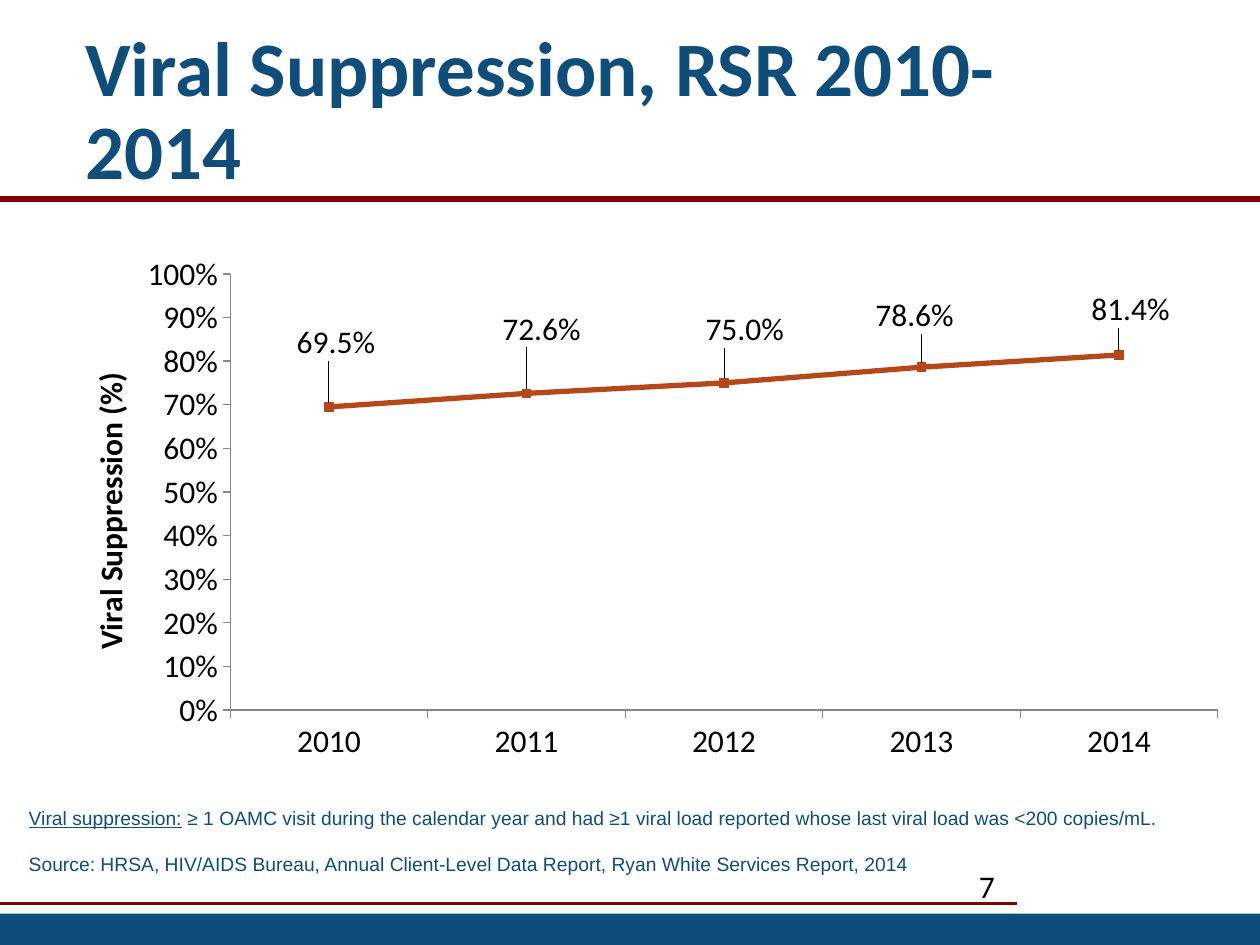
"""Build the viral suppression line chart slide."""
import pptx
import pptx.chart.data
import pptx.dml.color
import pptx.enum.chart
import pptx.enum.shapes
import pptx.enum.text
import pptx.oxml
import pptx.oxml.ns
import pptx.util
from pptx.util import Inches

COLORS = {"blue": "0F4D7B", "red": "800000", "orange": "B64718",
          "gray": "868686", "black": "000000"}
RATES = {"2010": 0.695, "2011": 0.726, "2012": 0.75, "2013": 0.786, "2014": 0.814}
LABEL_OFFSETS = [(0.006, -0.066), (0.013, -0.066), (0.018, -0.046),
                 (-0.006, -0.042), (0.01, -0.031)]
TITLE_FONT = {"name": "Calibri", "size": 44, "bold": True, "color": "blue"}
NOTE_FONT = {"name": "Arial", "size": 11, "color": "blue"}
BODY_FONT = {"name": "Calibri", "size": 18, "bold": False, "color": "black"}
NOTES = [
    [("Viral suppression:", {"underline": True}),
     (" ≥ 1 OAMC visit during the calendar year and had ≥1 viral load reported "
      "whose last viral load was <200 copies/mL.", {})],
    [("Source: HRSA, HIV/AIDS Bureau, Annual Client-Level Data Report, "
      "Ryan White Services Report, 2014", {})],
]


def rgb(name):
    """Return the named colour."""
    return pptx.dml.color.RGBColor.from_string(COLORS[name])


def style_font(font, values):
    """Set font attributes from a dict."""
    for name, value in values.items():
        if name == "color":
            font.color.rgb = rgb(value)
        else:
            setattr(font, name, pptx.util.Pt(value) if name == "size" else value)


def chart_xml(tag, content="", attributes=""):
    """Return a chart element with the given content."""
    namespace = pptx.oxml.ns.nsdecls("c")
    return pptx.oxml.parse_xml(f"<c:{tag} {namespace} {attributes}>{content}</c:{tag}>")


def manual_layout(**values):
    """Return a chart layout element."""
    items = "".join(f'<c:{name} val="{value}"/>' for name, value in values.items())
    return chart_xml("layout", f"<c:manualLayout>{items}</c:manualLayout>")


def place(element, layout, index):
    """Put a layout into a chart element in place of an existing one."""
    for existing in element.findall(pptx.oxml.ns.qn("c:layout")):
        element.remove(existing)
    element.insert(index, layout)


def add_rule(slide, left, right, top, width):
    """Add a horizontal red line."""
    line = slide.shapes.add_connector(
        pptx.enum.shapes.MSO_CONNECTOR.STRAIGHT,
        Inches(left), Inches(top), Inches(right), Inches(top))
    line.line.color.rgb = rgb("red")
    line.line.width = pptx.util.Pt(width)
    pptx.oxml.ns.qn("a:effectLst")
    line.element.spPr.append(pptx.oxml.parse_xml(
        f'<a:effectLst {pptx.oxml.ns.nsdecls("a")}/>'))


def add_footer_band(slide):
    """Add the blue band at the bottom."""
    shape = slide.shapes.add_shape(
        pptx.enum.shapes.MSO_SHAPE.RECTANGLE,
        Inches(0), Inches(7.25), Inches(10), Inches(0.25))
    shape.shadow.inherit = False
    shape.fill.solid()
    shape.fill.fore_color.rgb = rgb("blue")
    shape.line.fill.background()


def add_text(slide, box, paragraphs, font, space=0, **frame_format):
    """Add a wrapped text box made of paragraphs of runs and return its frame."""
    frame = slide.shapes.add_textbox(*map(Inches, box)).text_frame
    for name, value in {"word_wrap": True, **frame_format}.items():
        setattr(frame, name, value)
    for index, runs in enumerate(paragraphs):
        paragraph = frame.paragraphs[0] if index == 0 else frame.add_paragraph()
        if index:
            paragraph.space_before = pptx.util.Pt(space)
        for text, extra in runs:
            run = paragraph.add_run()
            run.text = text
            style_font(run.font, {**font, **extra})
    return frame


def style_axis(axis):
    """Give an axis a thin gray line, outer ticks and no grid."""
    formats = {"has_major_gridlines": False,
               "major_tick_mark": pptx.enum.chart.XL_TICK_MARK.OUTSIDE,
               "minor_tick_mark": pptx.enum.chart.XL_TICK_MARK.NONE}
    for name, value in formats.items():
        setattr(axis, name, value)
    axis.format.line.color.rgb = rgb("gray")
    axis.format.line.width = pptx.util.Pt(0.75)
    style_font(axis.tick_labels.font, BODY_FONT)


def style_value_axis(axis):
    """Set the percentage scale and the axis title."""
    for name, value in {"minimum_scale": 0, "maximum_scale": 1, "major_unit": 0.1}.items():
        setattr(axis, name, value)
    axis.tick_labels.number_format = "0%"
    axis.tick_labels.number_format_is_linked = False
    frame = axis.axis_title.text_frame
    frame.text = "Viral Suppression (%)"
    style_font(frame.paragraphs[0].runs[0].font, {**BODY_FONT, "bold": True})
    place(axis.axis_title._element,
          manual_layout(xMode="edge", yMode="edge", x=0.015, y=0.21), 1)


def style_series(series):
    """Colour the line and its square markers."""
    series.smooth = False
    series.format.line.color.rgb = rgb("orange")
    series.format.line.width = pptx.util.Pt(3)
    series.marker.style = pptx.enum.chart.XL_MARKER_STYLE.SQUARE
    series.marker.size = 5
    series.marker.format.fill.solid()
    series.marker.format.fill.fore_color.rgb = rgb("orange")
    series.marker.format.line.color.rgb = rgb("orange")


def add_point_labels(chart, series):
    """Show each value above its point, moved by its offset."""
    for index in range(len(LABEL_OFFSETS)):
        label = series.points[index].data_label
        style_font(label.font, BODY_FONT)
        label.position = pptx.enum.chart.XL_LABEL_POSITION.ABOVE
    labels = chart._chartSpace.iter(pptx.oxml.ns.qn("c:dLbl"))
    for element, (x, y) in zip(list(labels), LABEL_OFFSETS):
        place(element, manual_layout(x=x, y=y), 1)
        element.insert(2, chart_xml("numFmt", "", 'formatCode="0.0%" sourceLinked="0"'))


def add_rate_chart(slide):
    """Add the line chart of suppression rates."""
    data = pptx.chart.data.CategoryChartData(number_format="0.0%")
    data.categories = list(RATES)
    data.add_series("Series 1", list(RATES.values()))
    chart = slide.shapes.add_chart(
        pptx.enum.chart.XL_CHART_TYPE.LINE_MARKERS,
        Inches(0.52), Inches(2), Inches(9.15), Inches(4.35), data).chart
    chart.has_legend = False
    chart.has_title = False
    style_font(chart.font, BODY_FONT)
    plot = chart.plots[0]
    plot.vary_by_categories = False
    for axis in (chart.category_axis, chart.value_axis):
        style_axis(axis)
    style_value_axis(chart.value_axis)
    style_series(plot.series[0])
    add_point_labels(chart, plot.series[0])
    plot_area = chart._chartSpace.find(".//" + pptx.oxml.ns.qn("c:plotArea"))
    place(plot_area, manual_layout(layoutTarget="inner", xMode="edge", yMode="edge",
                                   x=0.143, y=0.04, w=0.857, h=0.796), 0)


def main():
    """Build and save the slide."""
    presentation = pptx.Presentation()
    presentation.slide_width = Inches(10)
    presentation.slide_height = Inches(7.5)
    slide = presentation.slides.add_slide(presentation.slide_layouts[6])
    add_rule(slide, -0.01, 8.07, 7.17, 1.5)
    add_footer_band(slide)
    add_rule(slide, 0, 10, 1.58, 3)
    add_text(slide, (0.13, 6.35, 9.54, 0.66), NOTES, NOTE_FONT, space=13)
    title = add_text(slide, (0.58, 0.17, 8.62, 1.45),
                     [[("Viral Suppression, RSR 2010-2014", {})]], TITLE_FONT,
                     vertical_anchor=pptx.enum.text.MSO_ANCHOR.MIDDLE)
    title.paragraphs[0].line_spacing = 0.9
    add_rate_chart(slide)
    add_text(slide, (7.67, 6.83, 2.25, 0.4), [[("7", {})]], BODY_FONT)
    presentation.save("out.pptx")


if __name__ == "__main__":
    main()
